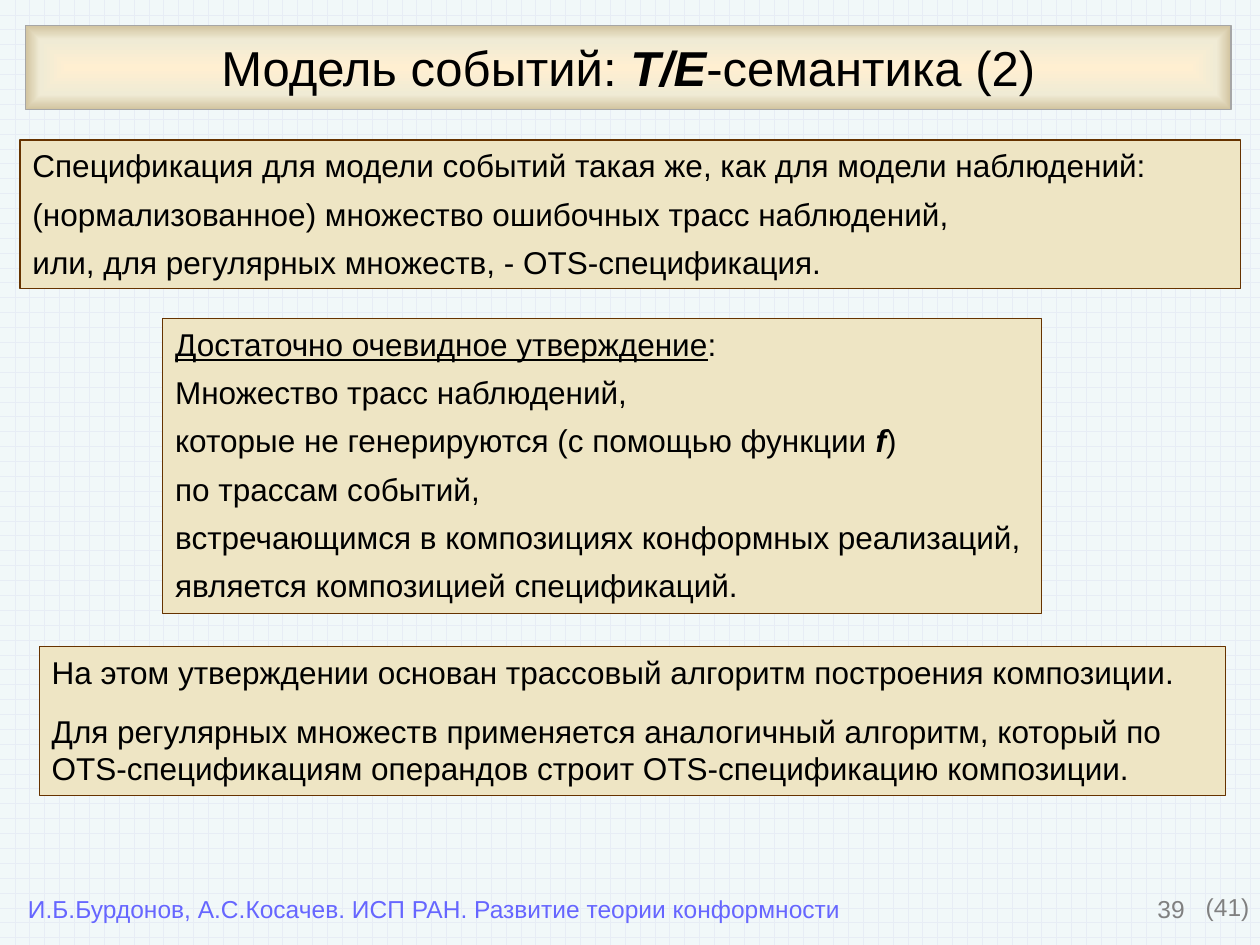
from pptx import Presentation
from pptx.dml.color import RGBColor
from pptx.enum import dml, shapes, text
from pptx.oxml import parse_xml
from pptx.oxml.ns import nsdecls
from pptx.util import Pt

TITLE = [("Модель событий: ", ""), ("T/E", "bi"), ("-семантика (2)", "")]
SPEC = [
    [("Спецификация для модели событий такая же, как для модели наблюдений:", "")],
    [("(нормализованное) множество ошибочных трасс наблюдений,", "")],
    [("или, для регулярных множеств, - OTS-спецификация.", "")],
]
CLAIM = [
    [("Достаточно очевидное утверждение", "u"), (":", "")],
    [("Множество трасс наблюдений,", "")],
    [("которые не генерируются (с помощью функции ", ""), ("f", "bi"), (")", "")],
    [("по трассам событий,", "")],
    [("встречающимся в композициях конформных реализаций,", "")],
    [("является композицией спецификаций.", "")],
]
RESULT = [
    [("На этом утверждении основан трассовый алгоритм построения композиции.", "")],
    [("Для регулярных множеств применяется аналогичный алгоритм, который по "
      "OTS-спецификациям операндов строит OTS-спецификацию композиции.", "")],
]
FOOT = "И.Б.Бурдонов, А.С.Косачев. ИСП РАН. Развитие теории конформности"
STYLES = {"b": "bold", "i": "italic", "u": "underline"}


def rgb(code):
    """Turn a hex string into a colour."""
    return RGBColor.from_string(code)


def apply(item, values):
    """Set each attribute in a dict of format values."""
    for name, value in values.items():
        setattr(item, name, value)


def write(para, runs, size, color, **form):
    """Fill a paragraph with styled runs."""
    apply(para, form)
    for words, marks in runs:
        run = para.add_run()
        run.text = words
        apply(run.font, {"name": "Arial", "size": Pt(size)})
        apply(run.font, {STYLES[m]: True for m in marks})
        run.font.color.rgb = rgb(color)


def edge(shape, color):
    """Give a shape a thin outline."""
    shape.line.color.rgb = rgb(color)
    shape.line.width = Pt(0.75)


def glow(shape, stops):
    """Fill a shape with a gradient running from its centre to its edges."""
    shape.fill.background()
    marks = "".join(f'<a:gs pos="{pos * 1000}"><a:srgbClr val="{code}"/></a:gs>'
                    for pos, code in stops)
    grad = parse_xml(
        f'<a:gradFill {nsdecls("a")} rotWithShape="1"><a:gsLst>{marks}</a:gsLst>'
        '<a:path path="shape"><a:fillToRect l="50000" t="50000" r="50000" b="50000"/>'
        '</a:path></a:gradFill>')
    props = shape.element.spPr
    props.replace(props.find("{*}noFill"), grad)


def head(slide):
    """Place and format the title."""
    shape = slide.shapes.title
    apply(shape, {"left": Pt(14.5), "top": Pt(14.5), "width": Pt(689), "height": Pt(48)})
    glow(shape, [(0, "FFEFD1"), (65, "F0EBD5"), (100, "D1C39F")])
    edge(shape, "A6A6A6")
    frame = shape.text_frame
    apply(frame, {"vertical_anchor": text.MSO_ANCHOR.MIDDLE, "word_wrap": True,
                  "auto_size": text.MSO_AUTO_SIZE.NONE})
    write(frame.paragraphs[0], TITLE, 28, "000000", alignment=text.PP_ALIGN.CENTER)


def panel(slide, spot, lines, gap=6):
    """Draw a filled panel with one paragraph per line."""
    shape = slide.shapes.add_shape(shapes.MSO_SHAPE.RECTANGLE, *map(Pt, spot))
    shape.shadow.inherit = False
    shape.fill.solid()
    shape.fill.fore_color.rgb = rgb("EEE5C4")
    edge(shape, "663300")
    frame = shape.text_frame
    apply(frame, {"vertical_anchor": text.MSO_ANCHOR.TOP, "word_wrap": True})
    for i, runs in enumerate(lines):
        para = frame.add_paragraph() if i else frame.paragraphs[0]
        write(para, runs, 18, "000000", alignment=text.PP_ALIGN.LEFT,
              space_before=Pt(gap if i else 6))


def label(slide, spot, words, color, align=text.PP_ALIGN.LEFT):
    """Add a one-line footer text without margins."""
    frame = slide.shapes.add_textbox(*map(Pt, spot)).text_frame
    apply(frame, {f"margin_{side}": 0 for side in ("left", "top", "right", "bottom")})
    frame.word_wrap = True
    write(frame.paragraphs[0], [(words, "")], 14, color, alignment=align)


def main():
    """Build and save the slide."""
    deck = Presentation()
    apply(deck, {"slide_width": Pt(720), "slide_height": Pt(540)})
    slide = deck.slides.add_slide(deck.slide_layouts[5])
    fill = slide.background.fill
    fill.patterned()
    fill.pattern = dml.MSO_PATTERN.HORIZONTAL_BRICK
    fill.fore_color.rgb = rgb("E7EDF5")
    fill.back_color.rgb = rgb("F1F8F9")
    label(slide, (516, 511, 161, 17), "39", "808080", text.PP_ALIGN.RIGHT)
    label(slide, (689, 510, 27, 17), "(41)", "808080")
    label(slide, (16, 511, 467, 17), FOOT, "6666FF")
    head(slide)
    panel(slide, (11.5, 80, 697.5, 85), SPEC)
    panel(slide, (93, 182, 502, 168.5), CLAIM)
    panel(slide, (22.5, 369.5, 678, 85), RESULT, 12)
    deck.save("out.pptx")


if __name__ == "__main__":
    main()
